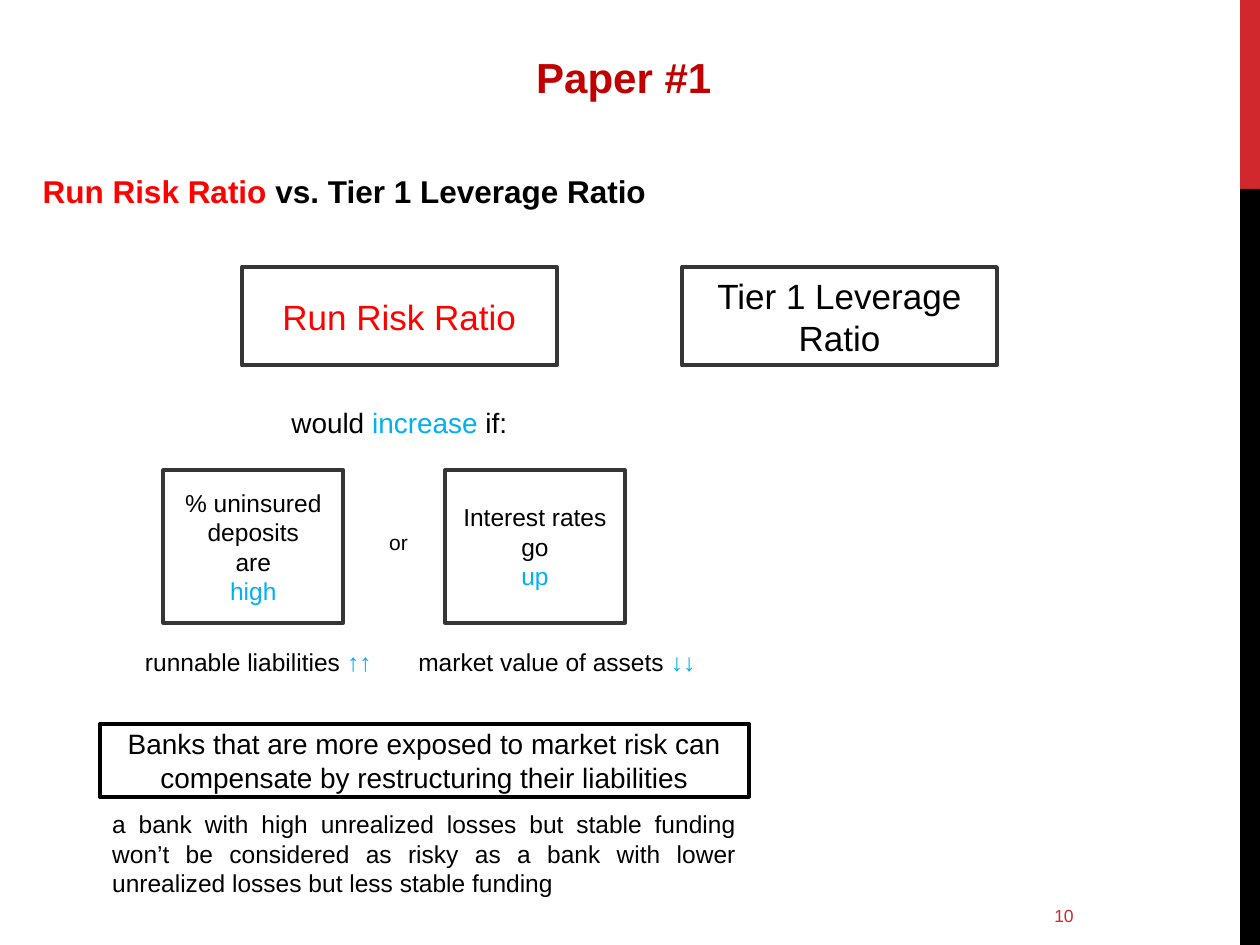
from pptx import Presentation
from pptx.dml.color import RGBColor
from pptx.enum.shapes import MSO_SHAPE
from pptx.enum.text import MSO_ANCHOR, PP_ALIGN
from pptx.util import Pt

CRIMSON = RGBColor(0xD1, 0x28, 0x2E)
DARK_RED = RGBColor(0xC0, 0x00, 0x00)
RED = RGBColor(0xFF, 0x00, 0x00)
BLUE = RGBColor(0x00, 0xB0, 0xF0)
CHARCOAL = RGBColor(0x35, 0x35, 0x35)
BLACK = RGBColor(0x00, 0x00, 0x00)
WHITE = RGBColor(0xFF, 0xFF, 0xFF)
FONT = "Arial"
PAGE_WIDTH, PAGE_HEIGHT = 720, 540


def write(shape, paragraphs, size, align, anchor, bold=False):
    """Fill a shape with paragraphs, each a list of (text, colour) spans."""
    frame = shape.text_frame
    frame.word_wrap = True
    frame.vertical_anchor = anchor
    for index, spans in enumerate(paragraphs):
        para = frame.paragraphs[0] if index == 0 else frame.add_paragraph()
        para.alignment = align
        for text, colour in spans:
            span = para.add_run()
            span.text = text
            span.font.name = FONT
            span.font.size = Pt(size)
            span.font.bold = bold
            span.font.color.rgb = colour


def add_label(shapes, box, spans, size, align=PP_ALIGN.LEFT,
              anchor=MSO_ANCHOR.TOP, bold=False):
    label = shapes.add_textbox(*map(Pt, box))
    write(label, [spans], size, align, anchor, bold)


def add_frame(shapes, box, paragraphs, size, line=CHARCOAL, align=PP_ALIGN.CENTER):
    frame = shapes.add_shape(MSO_SHAPE.RECTANGLE, *map(Pt, box))
    frame.shadow.inherit = False
    frame.fill.background()
    frame.line.color.rgb = line
    frame.line.width = Pt(2.25)
    write(frame, paragraphs, size, align, MSO_ANCHOR.MIDDLE)


def add_side_band(page, left, top, width, height):
    red_height = height / 5
    for band_top, band_height, colour in (
        (top, red_height, CRIMSON),
        (top + red_height, height - red_height, BLACK),
    ):
        band = page.shapes.add_shape(
            MSO_SHAPE.RECTANGLE, Pt(left), Pt(band_top), Pt(width), Pt(band_height))
        band.shadow.inherit = False
        band.fill.solid()
        band.fill.fore_color.rgb = colour
        band.line.fill.background()


def add_headings(page, left, top, width):
    add_label(page.shapes, (left + 24.5, top, 629.3, 36), [("Paper #1", DARK_RED)],
              24, PP_ALIGN.CENTER, bold=True)
    add_label(page.shapes, (left, top + 69, width, 204),
              [("Run Risk Ratio ", RED), ("vs. Tier 1 Leverage Ratio", BLACK)],
              18, bold=True)


def add_ratios(page, left, top, width, height):
    """Two ratio boxes side by side, with the lead-in below the first."""
    box_width = 180
    add_frame(page.shapes, (left, top, box_width, height),
              [[("Run Risk Ratio", RED)]], 20)
    add_frame(page.shapes, (left + width - box_width, top, box_width, height),
              [[("Tier 1 Leverage Ratio", BLACK)]], 20)
    add_frame(page.shapes, (left, top + height + 4.3, box_width, height),
              [[("would ", BLACK), ("increase", BLUE), (" if:", BLACK)]], 16, WHITE)


def add_cause(page, left, top, width, height, lines, effect, effect_left, effect_width):
    """A cause box, its last line stressed, above the effect it has."""
    group = page.shapes.add_group_shape()
    colours = [BLACK] * (len(lines) - 1) + [BLUE]
    add_frame(group.shapes, (left, top, width, height),
              [[span] for span in zip(lines, colours)], 14)
    words, arrows = effect
    add_frame(group.shapes, (effect_left, top + height + 3.4, effect_width, 37.4),
              [[(words, BLACK), (arrows, BLUE)]], 14, WHITE)


def add_conclusion(page, left, top, width, height):
    group = page.shapes.add_group_shape()
    add_frame(group.shapes, (left, top, width, height),
              [[("Banks that are more exposed to market risk can compensate "
                 "by restructuring their liabilities", BLACK)]], 16, BLACK)
    add_frame(group.shapes, (left, top + 53.3, width, height),
              [[("a bank with high unrealized losses but stable funding won’t be "
                 "considered as risky as a bank with lower unrealized losses but "
                 "less stable funding", BLACK)]], 14, WHITE, PP_ALIGN.JUSTIFY)


def main():
    deck = Presentation()
    deck.slide_width, deck.slide_height = Pt(PAGE_WIDTH), Pt(PAGE_HEIGHT)
    page = deck.slides.add_slide(deck.slide_layouts[6])

    # Side band and page number
    add_side_band(page, 708.7, 0, 11.3, PAGE_HEIGHT)
    add_label(page.shapes, (595.4, 509, 103.7, 28.8), [("10", CRIMSON)], 10,
              anchor=MSO_ANCHOR.MIDDLE)

    # Title, subtitle and the compared ratios
    add_headings(page, 17.3, 26, 690.5)
    add_ratios(page, 138.2, 152.6, 431.5, 56.2)

    # Two alternative causes
    add_label(page.shapes, (215.3, 298.8, 26.6, 21.6), [("or", BLACK)], 12)
    add_cause(page, 93.3, 268.8, 103, 87,
              ["% uninsured deposits", "are", "high"],
              ("runnable liabilities ", "↑↑"), 70.6, 154)
    add_cause(page, 254.2, 268.8, 103, 87,
              ["Interest rates", "go", "up"],
              ("market value of assets ", "↓↓"), 231.1, 174.2)

    # Conclusion
    add_conclusion(page, 57, 413.5, 370.8, 41.8)
    deck.save("out.pptx")


if __name__ == "__main__":
    main()
